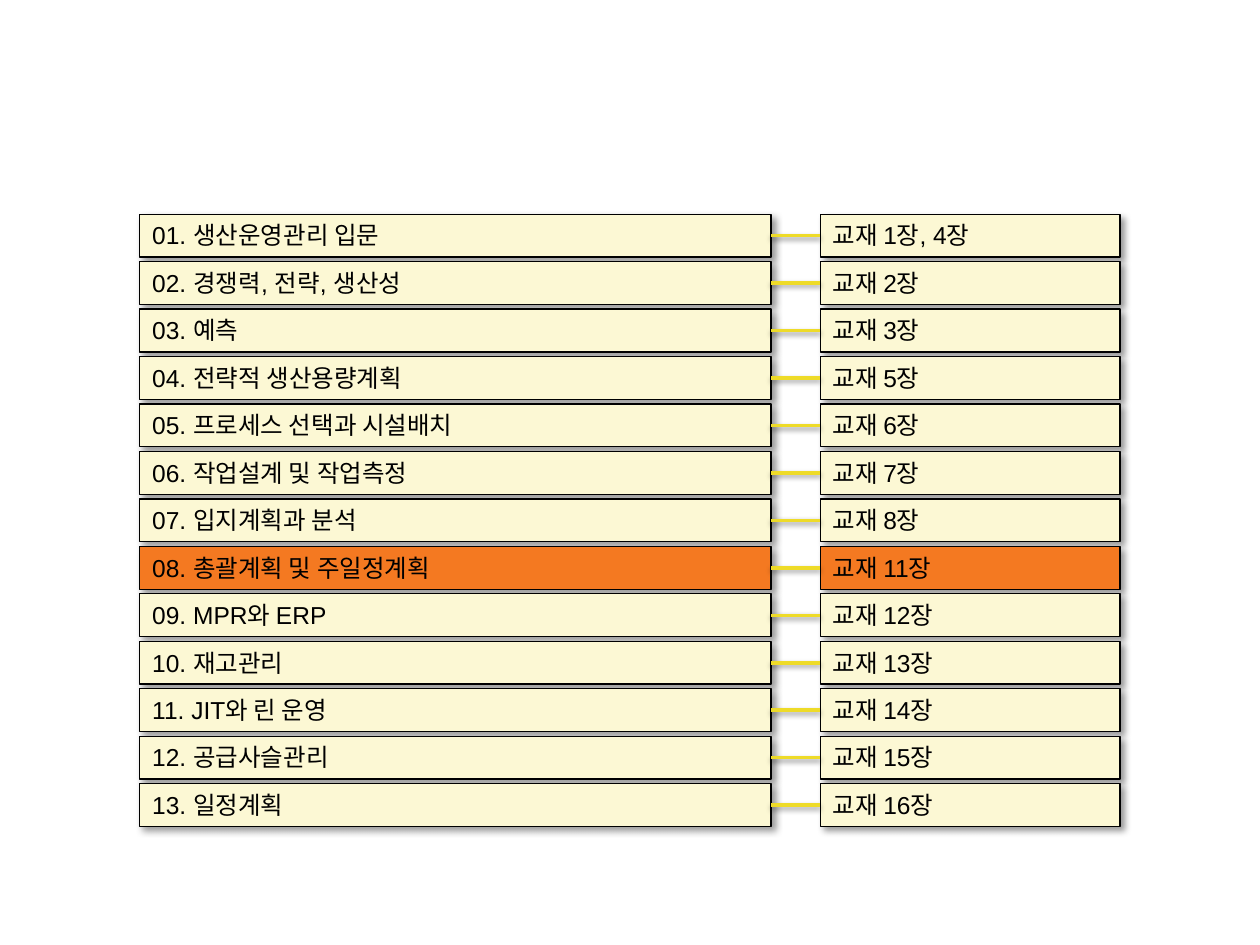
from lxml.etree import SubElement
from pptx import Presentation
from pptx.dml.color import RGBColor
from pptx.enum.shapes import MSO_CONNECTOR, MSO_SHAPE
from pptx.enum.text import MSO_ANCHOR, MSO_AUTO_SIZE, PP_ALIGN
from pptx.oxml.ns import qn
from pptx.util import Inches, Pt

BLACK = RGBColor(0x00, 0x00, 0x00)
CREAM = RGBColor(0xFC, 0xF8, 0xD4)
ORANGE = RGBColor(0xF4, 0x79, 0x21)
YELLOW = RGBColor(0xEE, 0xDB, 0x28)

FIRST_TOP, LAST_TOP = 1.7, 6.22
ROW_HEIGHT = 0.34
TOPIC_LEFT, TOPIC_WIDTH = 1.11, 5.01
CHAPTER_LEFT, CHAPTER_WIDTH = 6.51, 2.38
CURRENT_TOPIC = "총괄계획 및 주일정계획"

SCHEDULE = [
    ("생산운영관리 입문", "1장, 4장"),
    ("경쟁력, 전략, 생산성", "2장"),
    ("예측", "3장"),
    ("전략적 생산용량계획", "5장"),
    ("프로세스 선택과 시설배치", "6장"),
    ("작업설계 및 작업측정", "7장"),
    ("입지계획과 분석", "8장"),
    (CURRENT_TOPIC, "11장"),
    ("MPR와 ERP", "12장"),
    ("재고관리", "13장"),
    ("JIT와 린 운영", "14장"),
    ("공급사슬관리", "15장"),
    ("일정계획", "16장"),
]


class ScheduleSlide:
    """Draws course schedule elements in one style on a slide."""

    def __init__(self, slide):
        self.slide = slide
        self.font_name = "Arial"
        self.font_size = Pt(14)

    def add_shadow(self, properties, opacity, blur, distance, angle):
        effects = properties.find(qn("a:effectLst"))
        if effects is None:
            effects = SubElement(properties, qn("a:effectLst"))
        shadow = SubElement(
            effects,
            qn("a:outerShdw"),
            blurRad=str(Pt(blur)),
            dist=str(Pt(distance)),
            dir=str(angle * 60000),
            rotWithShape="0",
        )
        color = SubElement(shadow, qn("a:srgbClr"), val=str(BLACK))
        SubElement(color, qn("a:alpha"), val=str(opacity * 1000))

    def add_box(self, left, top, width, text, fill):
        shape = self.slide.shapes.add_shape(
            MSO_SHAPE.RECTANGLE,
            Inches(left), Inches(top), Inches(width), Inches(ROW_HEIGHT),
        )
        shape.fill.solid()
        shape.fill.fore_color.rgb = fill
        shape.line.color.rgb = BLACK
        shape.line.width = Pt(0.75)
        shape.shadow.inherit = False
        self.add_shadow(shape._element.spPr, 40, 4, 3, 45)
        frame = shape.text_frame
        frame.word_wrap = True
        frame.auto_size = MSO_AUTO_SIZE.SHAPE_TO_FIT_TEXT
        frame.vertical_anchor = MSO_ANCHOR.TOP
        paragraph = frame.paragraphs[0]
        paragraph.text = text
        paragraph.alignment = PP_ALIGN.LEFT
        paragraph.font.name = self.font_name
        paragraph.font.size = self.font_size
        paragraph.font.color.rgb = BLACK
        return shape

    def add_link(self, topic, chapter):
        connector = self.slide.shapes.add_connector(MSO_CONNECTOR.STRAIGHT, 0, 0, 0, 0)
        connector.begin_connect(topic, 3)
        connector.end_connect(chapter, 1)
        connector.line.color.rgb = YELLOW
        connector.line.width = Pt(2)
        self.add_shadow(connector._element.spPr, 38, 3.1, 1.6, 90)


def main():
    presentation = Presentation()
    presentation.slide_width = Inches(10)
    presentation.slide_height = Inches(7.5)
    schedule = ScheduleSlide(presentation.slides.add_slide(presentation.slide_layouts[6]))

    pitch = (LAST_TOP - FIRST_TOP) / (len(SCHEDULE) - 1)
    for index, (topic, chapter) in enumerate(SCHEDULE):
        top = FIRST_TOP + index * pitch
        fill = ORANGE if topic == CURRENT_TOPIC else CREAM
        topic_box = schedule.add_box(
            TOPIC_LEFT, top, TOPIC_WIDTH, f"{index + 1:02d}. {topic}", fill
        )
        chapter_box = schedule.add_box(
            CHAPTER_LEFT, top, CHAPTER_WIDTH, f"교재 {chapter}", fill
        )
        schedule.add_link(topic_box, chapter_box)

    presentation.save("out.pptx")


if __name__ == "__main__":
    main()
